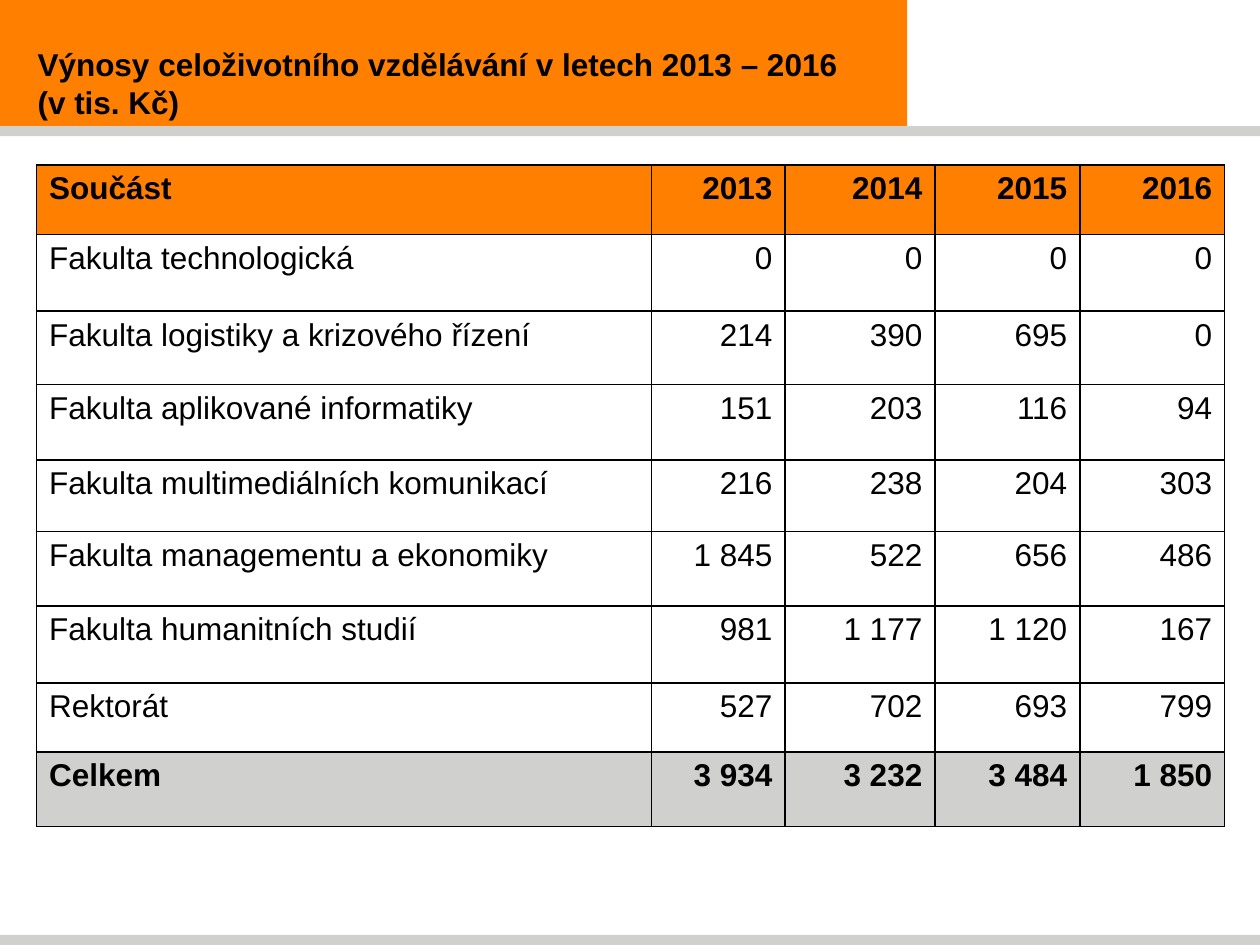
"""Build the slide on lifelong learning revenues for 2013 to 2016."""
from lxml import etree
from pptx import Presentation
from pptx.dml.color import RGBColor
from pptx.enum.shapes import MSO_SHAPE
from pptx.enum.text import MSO_ANCHOR, PP_ALIGN
from pptx.oxml.ns import qn
from pptx.util import Inches, Pt

RECTANGLE = MSO_SHAPE.RECTANGLE
MIDDLE = MSO_ANCHOR.MIDDLE
LEFT, RIGHT = PP_ALIGN.LEFT, PP_ALIGN.RIGHT
ORANGE = RGBColor(0xFF, 0x80, 0x01)
GREY = RGBColor(0xD0, 0xD0, 0xCE)
BLACK = RGBColor(0, 0, 0)

BANDS = [
    (0, 0, 7.2, 1, ORANGE),
    (0, 7.42, 10, 0.08, GREY),
    (0, 1, 10, 0.08, GREY),
]
COLUMN_WIDTHS = [4.88, 1.06, 1.19, 1.15, 1.15]
ROW_HEIGHTS = [0.55, 0.61, 0.58, 0.6, 0.57, 0.59, 0.61, 0.55, 0.59]
REVENUES = [
    ("Součást", "2013", "2014", "2015", "2016"),
    ("Fakulta technologická", "0", "0", "0", "0"),
    ("Fakulta logistiky a krizového řízení", "214", "390", "695", "0"),
    ("Fakulta aplikované informatiky", "151", "203", "116", "94"),
    ("Fakulta multimediálních komunikací", "216", "238", "204", "303"),
    ("Fakulta managementu a ekonomiky", "1 845", "522", "656", "486"),
    ("Fakulta humanitních studií", "981", "1 177", "1 120", "167"),
    ("Rektorát", "527", "702", "693", "799"),
    ("Celkem", "3 934", "3 232", "3 484", "1 850"),
]
ROW_FILLS = {0: ORANGE, len(REVENUES) - 1: GREY}


def write_text(frame, text, bold=False, align=LEFT, margin=0, indent=0):
    para = frame.paragraphs[0]
    para.text = text
    para.alignment = align
    properties = para._p.get_or_add_pPr()
    properties.set("marL", str(Inches(margin)))
    properties.set("indent", str(Inches(indent)))
    for span in para.runs:
        span.font.name = "Arial"
        span.font.size = Pt(18)
        span.font.bold = bold
        span.font.color.rgb = BLACK


def add_borders(cell):
    properties = cell._tc.get_or_add_tcPr()
    for side in ("a:lnL", "a:lnR", "a:lnT", "a:lnB"):
        line = etree.SubElement(properties, qn(side), w=str(Pt(1)))
        fill = etree.SubElement(line, qn("a:solidFill"))
        etree.SubElement(fill, qn("a:srgbClr"), val=str(BLACK))


deck = Presentation()
deck.slide_width = Inches(10)
deck.slide_height = Inches(7.5)
page = deck.slides.add_slide(deck.slide_layouts[6])

for left, top, width, height, color in BANDS:
    band = page.shapes.add_shape(
        RECTANGLE, Inches(left), Inches(top), Inches(width), Inches(height)
    )
    band.shadow.inherit = False
    band.fill.solid()
    band.fill.fore_color.rgb = color
    band.line.fill.background()

title_box = page.shapes.add_textbox(Inches(0), Inches(0.32), Inches(7.2), Inches(0.68))
title_box.text_frame.word_wrap = True
title_box.text_frame.vertical_anchor = MIDDLE
write_text(
    title_box.text_frame,
    "Výnosy celoživotního vzdělávání v letech 2013 – 2016\v(v tis. Kč)",
    bold=True,
    margin=0.2,
)

table = page.shapes.add_table(
    len(REVENUES), len(COLUMN_WIDTHS),
    Inches(0.29), Inches(1.31), Inches(9.42), Inches(5.25),
).table
table.first_row = False
table.horz_banding = False
for column, width in zip(table.columns, COLUMN_WIDTHS):
    column.width = Inches(width)
for row, height in zip(table.rows, ROW_HEIGHTS):
    row.height = Inches(height)

for row_index, values in enumerate(REVENUES):
    for column_index, value in enumerate(values):
        cell = table.cell(row_index, column_index)
        add_borders(cell)
        if row_index in ROW_FILLS:
            cell.fill.solid()
            cell.fill.fore_color.rgb = ROW_FILLS[row_index]
        else:
            cell.fill.background()
        write_text(
            cell.text_frame,
            value,
            bold=row_index in ROW_FILLS,
            align=RIGHT if column_index else LEFT,
            margin=0.38,
            indent=-0.38,
        )

deck.save("out.pptx")
